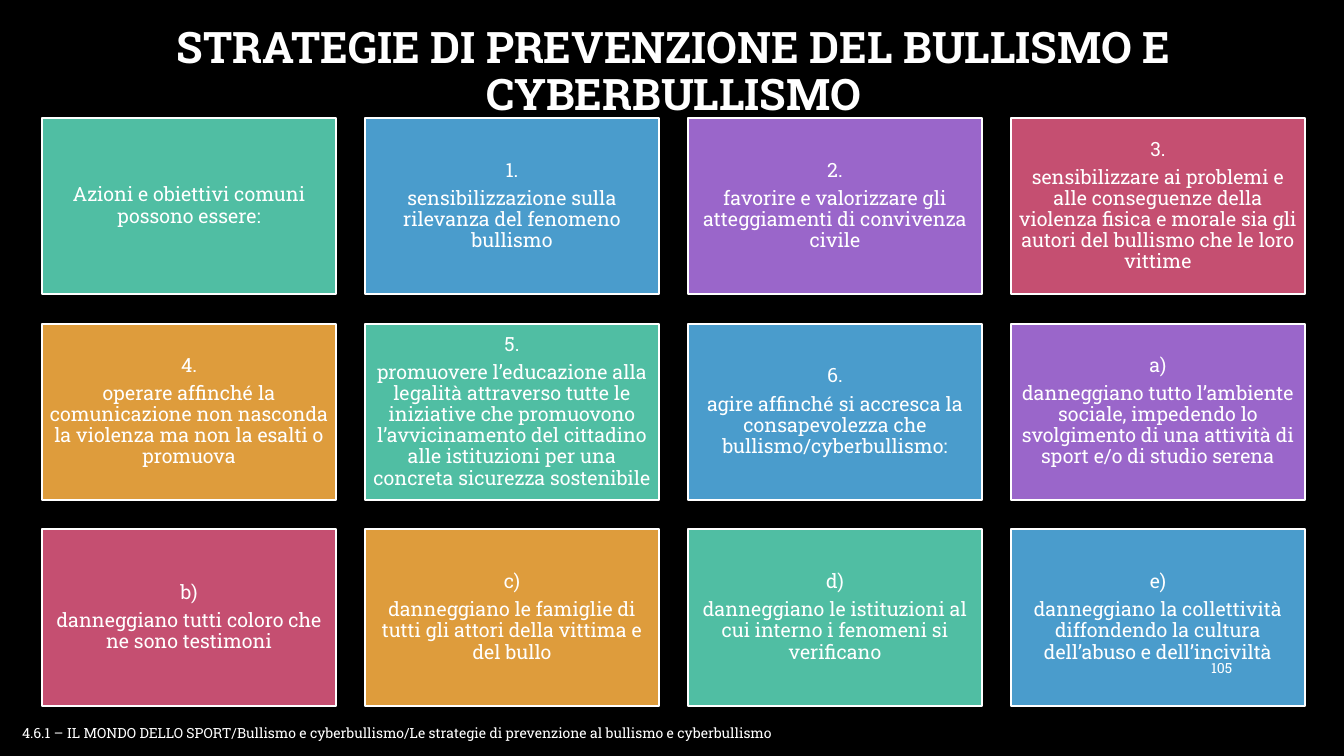
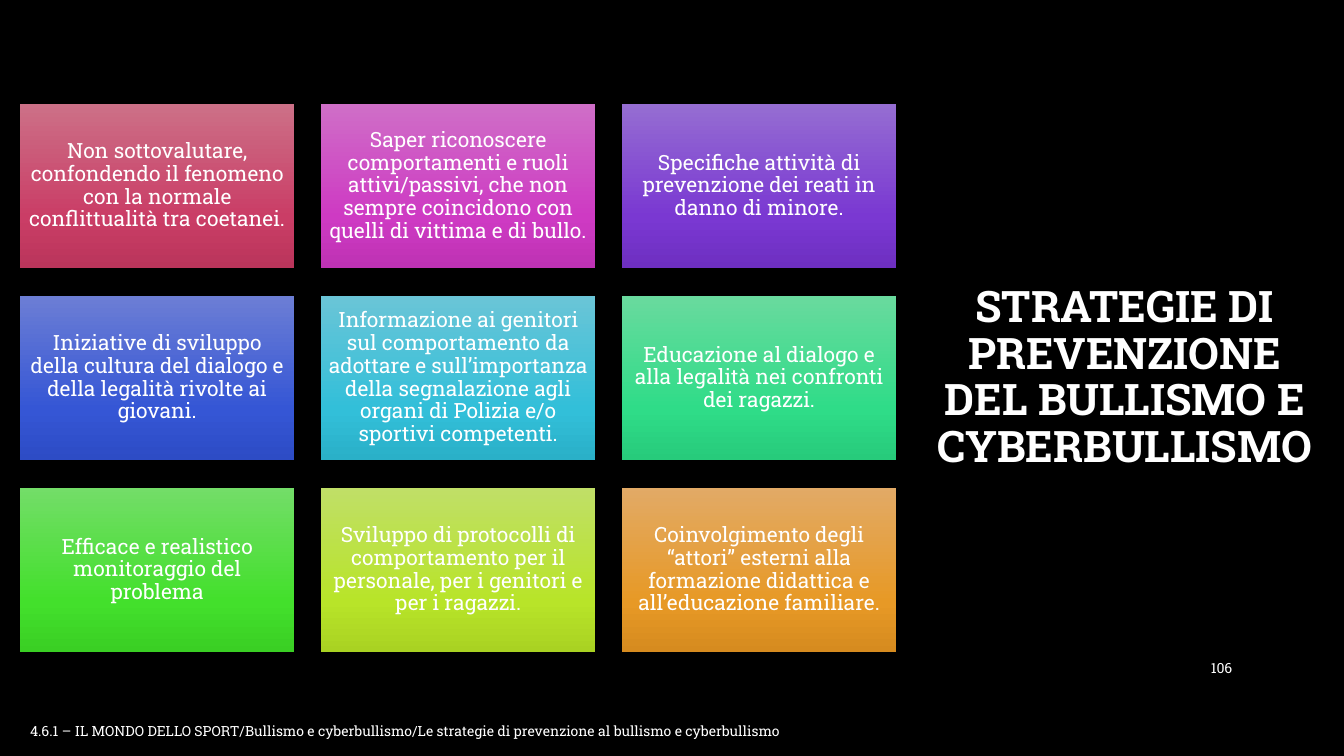
from copy import deepcopy
from dataclasses import dataclass
from itertools import cycle

from pptx import Presentation
from pptx.dml.color import RGBColor
from pptx.enum.shapes import MSO_SHAPE as Shape
from pptx.enum.text import MSO_ANCHOR as Anchor, MSO_AUTO_SIZE as AutoSize, PP_ALIGN as Align
from pptx.oxml.ns import qn
from pptx.util import Inches, Pt


@dataclass(frozen=True)
class Theme:
    font: str = "Roboto Slab"
    background: str = "000000"
    text: str = "FFFFFF"
    title_size: int = 31
    small_size: int = 10
    outline_width: float = 1.5
    flat_fills: tuple = ("50BEA3", "4A9CCC", "9A66CA", "C54F71", "DE9C3C")
    gradient_positions: tuple = (0, 0.69, 1)
    gradient_fills: tuple = (
        ("CC7087", "CA3D66", "BA355B"),
        ("CF6EC7", "CE3AC3", "BE32B4"),
        ("956DD2", "7A38D2", "6E2FC1"),
        ("6C7ED5", "3556D5", "2D4CC5"),
        ("6AC5D7", "32BFD9", "2AB0C8"),
        ("69DA9E", "2FDC88", "27CB7B"),
        ("73DD68", "43E02C", "3ACF24"),
        ("C0DF67", "B8E429", "A9D222"),
        ("E2AA66", "E79926", "D68B1F"),
    )


theme = Theme()

TITLE = "STRATEGIE DI PREVENZIONE DEL BULLISMO E CYBERBULLISMO"
FOOTER = (
    "4.6.1 – IL MONDO DELLO SPORT/Bullismo e cyberbullismo/"
    "Le strategie di prevenzione al bullismo e cyberbullismo"
)

slides = [
    {
        "number": "105",
        "title_box": (1.02, 0, 11.32, 1.45),
        "footer_box": (0.12, 7.14, 7.81, 0.27),
        "grid_box": (0.42, 1.17, 12.52, 5.83),
        "card_size": (2.91, 1.75),
        "columns": 4,
        "text_size": 14,
        "fills": theme.flat_fills,
        "cards": [
            ["Azioni e obiettivi comuni possono essere:"],
            ["1.", "sensibilizzazione sulla rilevanza del fenomeno bullismo"],
            ["2.", "favorire e valorizzare gli atteggiamenti di convivenza civile"],
            ["3.", "sensibilizzare ai problemi e alle conseguenze della violenza fisica e morale "
                   "sia gli autori del bullismo che le loro vittime"],
            ["4.", "operare affinché la comunicazione non nasconda la violenza "
                   "ma non la esalti o promuova"],
            ["5.", "promuovere l’educazione alla legalità attraverso tutte le iniziative "
                   "che promuovono l’avvicinamento del cittadino alle istituzioni "
                   "per una concreta sicurezza sostenibile"],
            ["6.", "agire affinché si accresca la consapevolezza che bullismo/cyberbullismo:"],
            ["a)", "danneggiano tutto l’ambiente sociale, impedendo lo svolgimento "
                   "di una attività di sport e/o di studio serena"],
            ["b)", "danneggiano tutti coloro che ne sono testimoni"],
            ["c)", "danneggiano le famiglie di tutti gli attori della vittima e del bullo"],
            ["d)", "danneggiano le istituzioni al cui interno i fenomeni si verificano"],
            ["e)", "danneggiano la collettività diffondendo la cultura dell’abuso e dell’inciviltà"],
        ],
    },
    {
        "number": "106",
        "title_box": (9.06, 0.7, 4.19, 6.11),
        "footer_box": (0.2, 7.12, 7.74, 0.27),
        "grid_box": (0.2, 1.03, 8.69, 5.44),
        "card_size": (2.72, 1.63),
        "columns": 3,
        "text_size": 15,
        "fills": theme.gradient_fills,
        "cards": [
            ["Non sottovalutare, confondendo il fenomeno con la normale conflittualità tra coetanei."],
            ["Saper riconoscere comportamenti e ruoli attivi/passivi, che non sempre coincidono "
             "con quelli di vittima e di bullo."],
            ["Specifiche attività di prevenzione dei reati in danno di minore."],
            ["Iniziative di sviluppo della cultura del dialogo e della legalità rivolte ai giovani."],
            ["Informazione ai genitori sul comportamento da adottare e sull’importanza "
             "della segnalazione agli organi di Polizia e/o sportivi competenti."],
            ["Educazione al dialogo e alla legalità nei confronti dei ragazzi."],
            ["Efficace e realistico monitoraggio del problema"],
            ["Sviluppo di protocolli di comportamento per il personale, per i genitori "
             "e per i ragazzi."],
            ["Coinvolgimento degli “attori” esterni alla formazione didattica "
             "e all’educazione familiare."],
        ],
    },
]


def write(shape, lines, size, align, anchor=Anchor.MIDDLE, spacing=1.0, after=0, bold=False):
    frame = shape.text_frame
    frame.text = "\n".join(lines)
    frame.word_wrap = True
    frame.auto_size = AutoSize.NONE
    frame.vertical_anchor = anchor
    for paragraph in frame.paragraphs:
        paragraph.alignment = align
        paragraph.line_spacing = spacing
        paragraph.space_before = Pt(0)
        paragraph.space_after = Pt(after)
        paragraph.font.name = theme.font
        paragraph.font.size = Pt(size)
        paragraph.font.bold = bold
        paragraph.font.color.rgb = RGBColor.from_string(theme.text)


def paint(shape, colours):
    if isinstance(colours, str):
        shape.fill.solid()
        shape.fill.fore_color.rgb = RGBColor.from_string(colours)
        shape.line.color.rgb = RGBColor.from_string(theme.text)
        shape.line.width = Pt(theme.outline_width)
        return
    shape.line.fill.background()
    shape.fill.gradient()
    shape.fill.gradient_angle = 270
    stop_list = shape._element.spPr.find(".//" + qn("a:gsLst"))
    stop_list.insert(1, deepcopy(stop_list[0]))
    for stop, position, colour in zip(shape.fill.gradient_stops, theme.gradient_positions, colours):
        stop.position = position
        stop.color.rgb = RGBColor.from_string(colour)


presentation = Presentation()
presentation.slide_width = Inches(13.33)
presentation.slide_height = Inches(7.5)
master_fill = presentation.slide_master.background.fill
master_fill.solid()
master_fill.fore_color.rgb = RGBColor.from_string(theme.background)
title_only = presentation.slide_layouts.get_by_name("Title Only")

for content in slides:
    slide = presentation.slides.add_slide(title_only)
    title = slide.shapes.title
    title.left, title.top, title.width, title.height = map(Inches, content["title_box"])
    write(title, [TITLE], theme.title_size, Align.CENTER, spacing=0.9, bold=True)

    left, top, grid_width, grid_height = content["grid_box"]
    width, height = content["card_size"]
    columns = content["columns"]
    rows = len(content["cards"]) // columns
    column_step = (grid_width - width) / (columns - 1)
    row_step = (grid_height - height) / (rows - 1)

    for index, (lines, colours) in enumerate(zip(content["cards"], cycle(content["fills"]))):
        row, column = divmod(index, columns)
        card = slide.shapes.add_shape(
            Shape.RECTANGLE,
            Inches(left + column * column_step),
            Inches(top + row * row_step),
            Inches(width),
            Inches(height),
        )
        card.shadow.inherit = False
        paint(card, colours)
        frame = card.text_frame
        frame.margin_left = frame.margin_right = Inches(0.06)
        frame.margin_top = frame.margin_bottom = Inches(0.06)
        write(card, lines, content["text_size"], Align.CENTER, spacing=0.9, after=5)

    number = slide.shapes.add_textbox(*map(Inches, (11.5, 6.43, 0.82, 0.4)))
    write(number, [content["number"]], theme.small_size, Align.RIGHT)
    footer = slide.shapes.add_textbox(*map(Inches, content["footer_box"]))
    write(footer, [FOOTER], theme.small_size, Align.LEFT, Anchor.TOP)

presentation.save("out.pptx")
